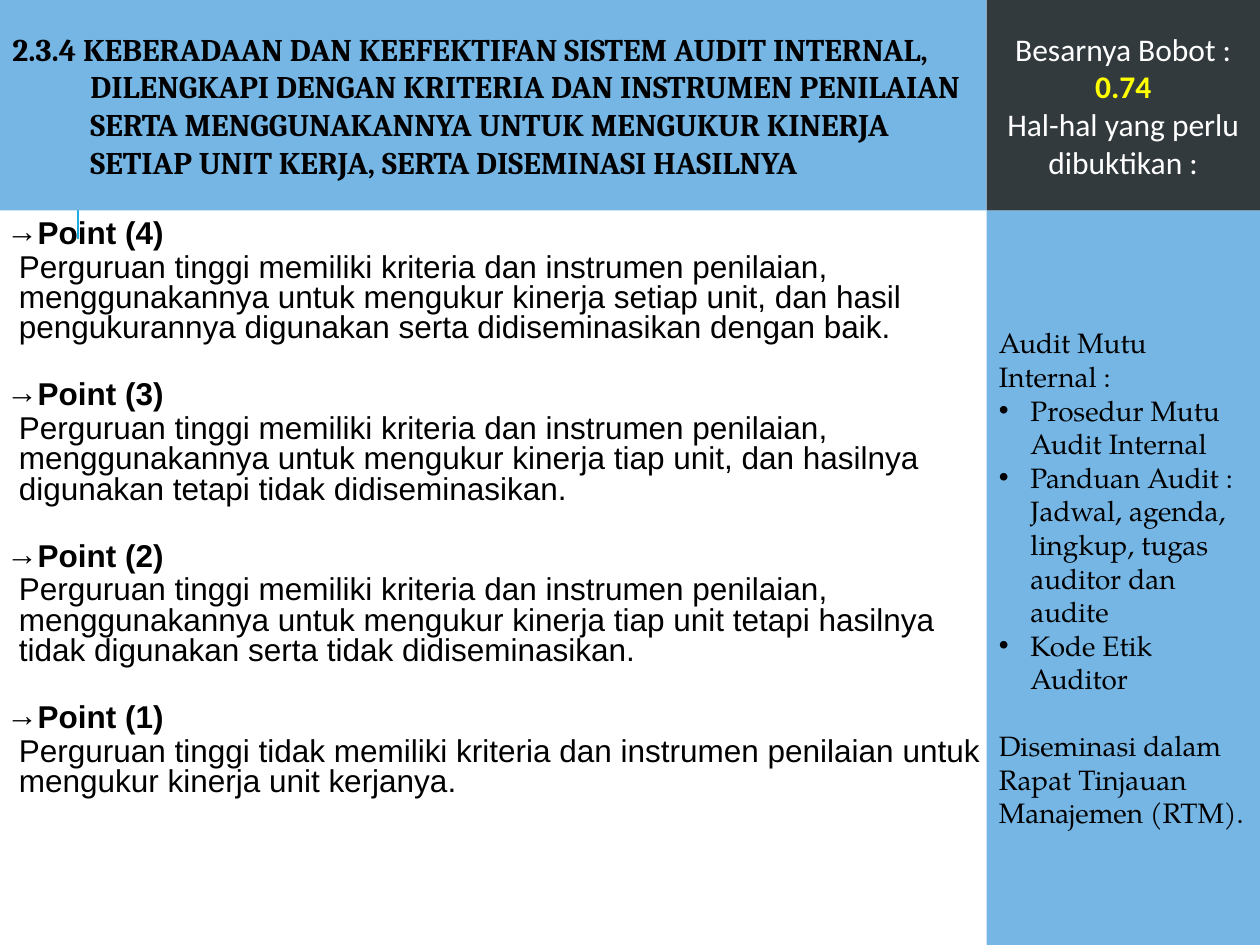
"""Build the slide on criterion 2.3.4, internal audit scoring."""
import pptx
import pptx.dml.color
import pptx.enum.shapes
import pptx.enum.text
import pptx.oxml.ns
import pptx.util
from lxml import etree

Inches, Pt = pptx.util.Inches, pptx.util.Pt
ALIGN = pptx.enum.text.PP_ALIGN
ANCHOR = pptx.enum.text.MSO_ANCHOR

COLORS = {"sky": "75B6E5", "slate": "333A3E", "accent": "1CADE4",
          "black": "000000", "white": "FFFFFF", "yellow": "FFFF00"}

TITLE = ("2.3.4 KEBERADAAN DAN KEEFEKTIFAN SISTEM AUDIT INTERNAL, DILENGKAPI DENGAN "
         "KRITERIA DAN INSTRUMEN PENILAIAN SERTA MENGGUNAKANNYA UNTUK MENGUKUR KINERJA "
         "SETIAP UNIT KERJA, SERTA DISEMINASI HASILNYA")
POINTS = [
    ("Point (4)", "Perguruan tinggi memiliki kriteria dan instrumen penilaian, menggunakannya "
     "untuk mengukur kinerja setiap unit, dan hasil pengukurannya digunakan serta "
     "didiseminasikan dengan baik."),
    ("Point (3)", "Perguruan tinggi memiliki kriteria dan instrumen penilaian, menggunakannya "
     "untuk mengukur kinerja tiap unit, dan hasilnya digunakan tetapi tidak didiseminasikan."),
    ("Point (2)", "Perguruan tinggi memiliki kriteria dan instrumen penilaian, menggunakannya "
     "untuk mengukur kinerja tiap unit tetapi hasilnya tidak digunakan serta tidak "
     "didiseminasikan."),
    ("Point (1)", "Perguruan tinggi tidak memiliki kriteria dan instrumen penilaian untuk "
     "mengukur kinerja unit kerjanya."),
]
EVIDENCE_HEAD = "Audit Mutu Internal :"
EVIDENCE = ["Prosedur Mutu Audit Internal",
            "Panduan Audit : Jadwal, agenda, lingkup, tugas auditor dan audite",
            "Kode Etik Auditor"]
EVIDENCE_END = "Diseminasi dalam Rapat Tinjauan Manajemen (RTM)."
WEIGHT_LABEL, WEIGHT = "Besarnya Bobot : ", "0.74"
PROOF_LABEL = "Hal-hal yang perlu dibuktikan :"

SLIDE_W, SLIDE_H = 10, 7.5
MAIN_W, HEAD_H, BODY_TOP = 7.83, 1.67, 1.7
BLOCK_GAP = 19


def rgb(name):
    return pptx.dml.color.RGBColor.from_string(COLORS[name])


def add_panel(slide, left, top, width, height, fill):
    sp = slide.shapes.add_shape(pptx.enum.shapes.MSO_SHAPE.RECTANGLE, Inches(left),
                                Inches(top), Inches(width), Inches(height))
    sp.shadow.inherit = False
    sp.fill.solid()
    sp.fill.fore_color.rgb = rgb(fill)
    sp.line.fill.background()
    tf = sp.text_frame
    tf.word_wrap = True
    tf.vertical_anchor = ANCHOR.MIDDLE
    return tf


def add_paragraph(tf, align=ALIGN.LEFT, margin=0, indent=0, bullet=None, before=0):
    p = tf.paragraphs[0]
    if p.runs:
        p = tf.add_paragraph()
    p.alignment = align
    p.space_before = Pt(before)
    pPr = p._p.get_or_add_pPr()
    pPr.set("marL", str(Inches(margin)))
    pPr.set("indent", str(Inches(indent)))
    if bullet:
        etree.SubElement(pPr, pptx.oxml.ns.qn("a:buFont"), typeface="Arial")
        etree.SubElement(pPr, pptx.oxml.ns.qn("a:buChar"), char=bullet)
    return p


def add_run(p, text, font, size, color="black", bold=False):
    r = p.add_run()
    r.text = text
    r.font.name = font
    r.font.size = Pt(size)
    r.font.bold = bold
    r.font.color.rgb = rgb(color)


def add_accent(slide):
    line = slide.shapes.add_connector(pptx.enum.shapes.MSO_CONNECTOR.STRAIGHT, Inches(0.62),
                                      Inches(1.9), Inches(0.62), Inches(0.9))
    line.line.color.rgb = rgb("accent")
    line.line.width = Pt(1.5)
    etree.SubElement(line._element.spPr, pptx.oxml.ns.qn("a:effectLst"))


def add_title(slide):
    tf = add_panel(slide, 0, 0, MAIN_W, HEAD_H, "sky")
    add_run(add_paragraph(tf, margin=0.62, indent=-0.62), TITLE, "Cambria", 18, bold=True)


def add_evidence(slide):
    tf = add_panel(slide, MAIN_W, HEAD_H, SLIDE_W - MAIN_W, SLIDE_H - HEAD_H, "sky")
    font = "TeX Gyre Pagella"
    add_run(add_paragraph(tf), EVIDENCE_HEAD, font, 16)
    for item in EVIDENCE:
        add_run(add_paragraph(tf, margin=0.25, indent=-0.25, bullet="•"), item, font, 16)
    add_run(add_paragraph(tf, before=BLOCK_GAP), EVIDENCE_END, font, 16)


def add_points(slide):
    sp = slide.shapes.add_textbox(Inches(0), Inches(BODY_TOP), Inches(MAIN_W),
                                  Inches(SLIDE_H - BODY_TOP))
    tf = sp.text_frame
    tf.word_wrap = True
    tf.margin_left = tf.margin_right = tf.margin_top = tf.margin_bottom = Inches(0.05)
    for i, (name, text) in enumerate(POINTS):
        head = add_paragraph(tf, margin=0.1, indent=-0.1, bullet="→",
                             before=BLOCK_GAP if i else 0)
        add_run(head, name, "Arial", 18, bold=True)
        body = add_paragraph(tf, margin=0.1)
        add_run(body, text, "Arial", 18)
    for p in tf.paragraphs:
        p.line_spacing = 0.8
        p.space_after = Pt(2)


def add_weight(slide):
    tf = add_panel(slide, MAIN_W, 0, SLIDE_W - MAIN_W, HEAD_H, "slate")
    p = add_paragraph(tf, ALIGN.CENTER)
    add_run(p, WEIGHT_LABEL, "Calibri", 18, "white")
    add_run(p, WEIGHT, "Calibri", 18, "yellow", True)
    add_run(add_paragraph(tf, ALIGN.CENTER), PROOF_LABEL, "Calibri", 18, "white")


def main():
    prs = pptx.Presentation()
    prs.slide_width, prs.slide_height = Inches(SLIDE_W), Inches(SLIDE_H)
    slide = prs.slides.add_slide(prs.slide_layouts[6])
    for add_part in (add_accent, add_title, add_evidence, add_points, add_weight):
        add_part(slide)
    prs.save("out.pptx")


if __name__ == "__main__":
    main()
